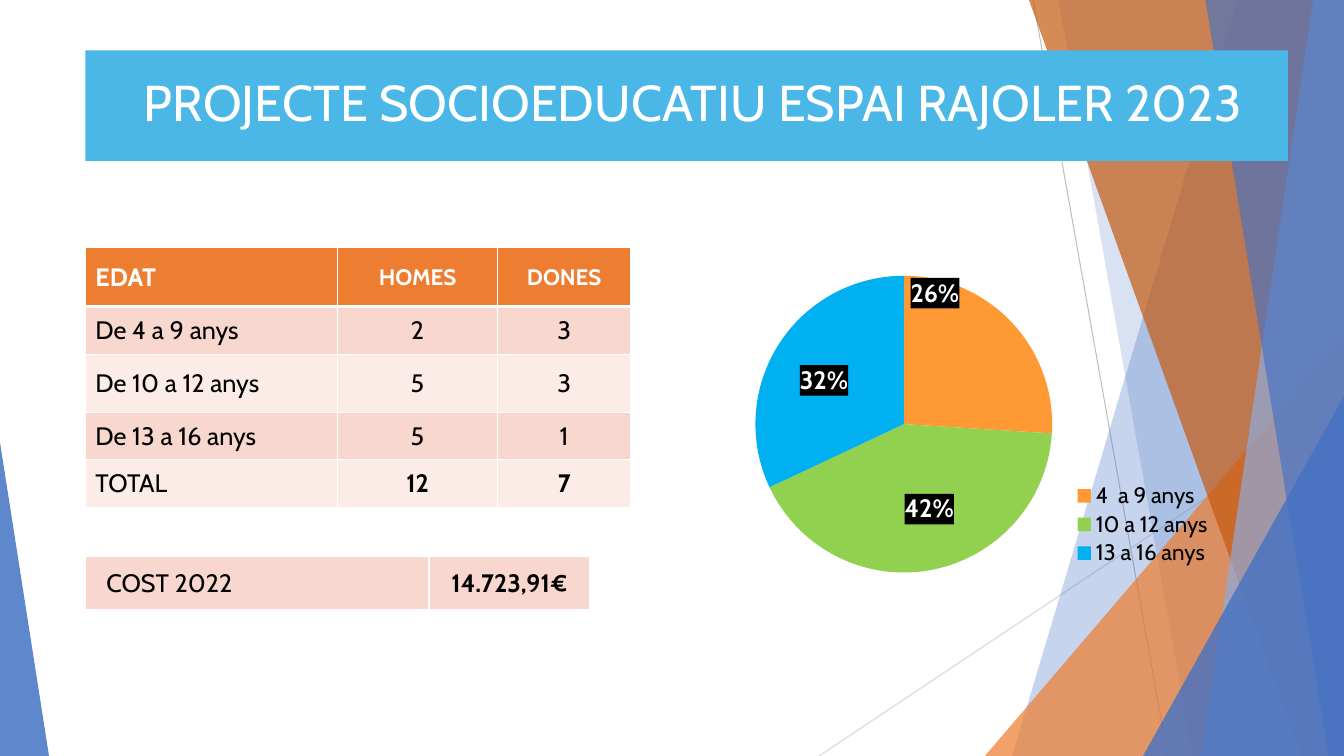
import pptx
import pptx.util
import pptx.dml.color
import pptx.chart.data
import pptx.enum.chart
import pptx.enum.shapes
import pptx.enum.text
import pptx.oxml
import pptx.oxml.ns
import lxml.etree

Pt = pptx.util.Pt
RGB = pptx.dml.color.RGBColor.from_string
qn = pptx.oxml.ns.qn
Sub = lxml.etree.SubElement
ALIGN = pptx.enum.text.PP_ALIGN
MID = pptx.enum.text.MSO_ANCHOR.MIDDLE
FONT = "Cabin"
HUES = {
    "white": "FFFFFF", "black": "000000", "grey": "BFBFBF", "pale": "D9D9D9",
    "blue": "4472C4", "light": "8FAADC", "orange": "ED7D31", "rust": "C55A11",
    "banner": "4BB7E7", "rose": "F8D7CE", "blush": "FCECE8",
    "young": "FF9933", "mid": "92D050", "teen": "00B0F0",
}


def paint(shape, hue, alpha):
    """Fill a shape with a see-through colour and drop its line and shadow."""
    shape.shadow.inherit = False
    shape.line.fill.background()
    shape.fill.solid()
    shape.fill.fore_color.rgb = RGB(HUES[hue])
    tint = shape.element.spPr.find(qn("a:solidFill"))[0]
    Sub(tint, qn("a:alpha")).set("val", str(alpha * 1000))


def dress(cell, text, hue, size, bold, ink, center, base):
    """Write one table cell, with white borders and a lower edge of width base."""
    cell.text_frame.text = text
    cell.vertical_anchor = MID
    par = cell.text_frame.paragraphs[0]
    par.alignment = ALIGN.CENTER if center else ALIGN.LEFT
    font = par.runs[0].font
    font.name, font.size, font.bold = FONT, Pt(size), bold
    font.color.rgb = RGB(HUES[ink])
    props = cell._tc.get_or_add_tcPr()
    for side, width in (("L", 1), ("R", 1), ("T", 1), ("B", base)):
        edge = Sub(props, qn("a:ln" + side), w=str(Pt(width)))
        Sub(Sub(edge, qn("a:solidFill")), qn("a:srgbClr")).set("val", HUES["white"])
    cell.fill.solid()
    cell.fill.fore_color.rgb = RGB(HUES[hue])


deck = pptx.Presentation()
deck.slide_width, deck.slide_height = Pt(960), Pt(540)
slide = deck.slides.add_slide(deck.slide_layouts[5])
shapes = slide.shapes

# Backdrop
for x1, y1, x2, y2, hue in ((738, 0, 834, 540, "grey"), (960, 290, 585, 540, "pale")):
    line = shapes.add_connector(
        pptx.enum.shapes.MSO_CONNECTOR.STRAIGHT, Pt(x1), Pt(y1), Pt(x2), Pt(y2))
    line.line.color.rgb = RGB(HUES[hue])
    line.line.width = Pt(0.75)
    Sub(line.element.spPr, qn("a:effectLst"))

# Bands give top and bottom x; wedges give left, top, width, height and apex
facets = (
    ((884, 723), "blue", 30),
    ((756, 852), "blue", 20),
    ((703.5, 240, 256.5, 300, 1), "orange", 72),
    ((735, 929.5), "rust", 70),
    ((938, 858), "light", 70),
    ((861, 949), "blue", 65),
    ((816.5, 283, 143.5, 257, 1), "blue", 80),
    ((0, 316, 35, 224, 0), "blue", 85),
)
for place, hue, alpha in facets:
    if len(place) == 2:
        top, foot = place
        pen = shapes.build_freeform(Pt(top), 0)
        pen.add_line_segments(
            [(Pt(960), 0), (Pt(960), Pt(540)), (Pt(foot), Pt(540))], close=True)
        facet = pen.convert_to_shape()
    else:
        facet = shapes.add_shape(
            pptx.enum.shapes.MSO_SHAPE.ISOSCELES_TRIANGLE, *map(Pt, place[:4]))
        facet.adjustments[0] = place[4]
    paint(facet, hue, alpha)

# Title banner, brought in front of the backdrop
title = shapes.title
title.element.getparent().append(title.element)
title.left, title.top, title.width, title.height = Pt(61), Pt(36), Pt(859), Pt(79)
title.fill.solid()
title.fill.fore_color.rgb = RGB(HUES["banner"])
frame = title.text_frame
frame.text = "PROJECTE SOCIOEDUCATIU ESPAI RAJOLER 2023"
frame.auto_size = pptx.enum.text.MSO_AUTO_SIZE.NONE
frame.word_wrap = True
frame.vertical_anchor = MID
frame.margin_left = Pt(16)
head = frame.paragraphs[0]
head.alignment = ALIGN.CENTER
head.line_spacing = 0.9
font = head.runs[0].font
font.name, font.size = FONT, Pt(36)
font.color.rgb = RGB(HUES["white"])

# Ages table
rows = (
    ("EDAT", "HOMES", "DONES"),
    ("De 4 a 9 anys", "2", "3"),
    ("De 10 a 12 anys", "5", "3"),
    ("De 13 a 16 anys", "5", "1"),
    ("TOTAL", "12", "7"),
)
ages = shapes.add_table(5, 3, Pt(61), Pt(177), Pt(389.5), Pt(185.5)).table
for col, width in zip(ages.columns, (180, 114.5, 95)):
    col.width = Pt(width)
for row, height in zip(ages.rows, (42, 34, 41.5, 34, 34)):
    row.height = Pt(height)
for r, row in enumerate(rows):
    for c, text in enumerate(row):
        top = r == 0
        hue = "orange" if top else ("blush", "rose")[r % 2]
        dress(ages.cell(r, c), text, hue, 16 if top and c else 18,
              top or (r == 4 and c > 0), "white" if top else "black",
              c > 0, 3 if top else 1)

# Age shares
data = pptx.chart.data.CategoryChartData()
data.categories = ["4  a 9 anys", "10 a 12 anys", "13 a 16 anys"]
data.add_series("Series 1", (26, 42, 32))
chart = shapes.add_chart(
    pptx.enum.chart.XL_CHART_TYPE.PIE, Pt(473), Pt(134), Pt(411), Pt(286.5), data).chart
chart.has_title = False
chart.font.name, chart.font.size = FONT, Pt(18)
chart.font.color.rgb = RGB(HUES["black"])
chart.has_legend = True
legend = chart.legend
legend.position = pptx.enum.chart.XL_LEGEND_POSITION.RIGHT
legend.include_in_layout = False
legend.font.name, legend.font.size = FONT, Pt(16)
plot = chart.plots[0]
plot.vary_by_categories = True
pie = plot.series[0]
for n, hue in enumerate(("young", "mid", "teen")):
    fill = pie.points[n].format.fill
    fill.solid()
    fill.fore_color.rgb = RGB(HUES[hue])

labels = pie.data_labels
labels.show_percentage, labels.show_value = True, False
labels.number_format, labels.number_format_is_linked = "0%", False
labels.position = pptx.enum.chart.XL_LABEL_POSITION.CENTER
labels.font.name, labels.font.size, labels.font.bold = FONT, Pt(18), True
labels.font.color.rgb = RGB(HUES["white"])
tags = labels._element
plate = lxml.etree.Element(qn("c:spPr"))
Sub(Sub(plate, qn("a:solidFill")), qn("a:srgbClr")).set("val", HUES["black"])
tags.find(qn("c:txPr")).addprevious(plate)

# Label shifts, plot area and legend as shares of the chart
spots = []
for n, shift in enumerate(((-0.04, -0.2), (0.02, 0.03), (-0.03, -0.01))):
    tag = lxml.etree.Element(qn("c:dLbl"))
    Sub(tag, qn("c:idx")).set("val", str(n))
    spots.append((Sub(tag, qn("c:layout")), dict(zip("xy", shift))))
    for part in tags:
        if part.tag not in (qn("c:dLbl"), qn("c:showLeaderLines")):
            tag.append(pptx.oxml.parse_xml(lxml.etree.tostring(part)))
    tags.insert(n, tag)
area = chart._chartSpace.chart.plotArea
old = area.find(qn("c:layout"))
if old is not None:
    area.remove(old)
field = lxml.etree.Element(qn("c:layout"))
area.insert(0, field)
spots.append((field, {"layoutTarget": "inner", "xMode": "edge", "yMode": "edge",
                      "x": 0.12, "y": 0.22, "w": 0.6, "h": 0.74}))
key = legend._element
old = key.find(qn("c:layout"))
if old is not None:
    key.remove(old)
field = lxml.etree.Element(qn("c:layout"))
key.find(qn("c:legendPos")).addnext(field)
spots.append((field, {"xMode": "edge", "yMode": "edge",
                      "x": 0.71, "y": 0.73, "w": 0.25, "h": 0.22}))
for field, place in spots:
    box = Sub(field, qn("c:manualLayout"))
    for name, val in place.items():
        Sub(box, qn("c:" + name)).set("val", str(val))

# Cost table
cost = shapes.add_table(1, 2, Pt(61), Pt(397.5), Pt(360.5), Pt(38)).table
cost.columns[0].width, cost.columns[1].width = Pt(245.5), Pt(115)
for c, text in enumerate(("COST 2022", "14.723,91€")):
    dress(cost.cell(0, c), text, "rose", 18, c == 1, "black", c == 1, 1)
cost.cell(0, 0).margin_left = Pt(15)

deck.save("out.pptx")
